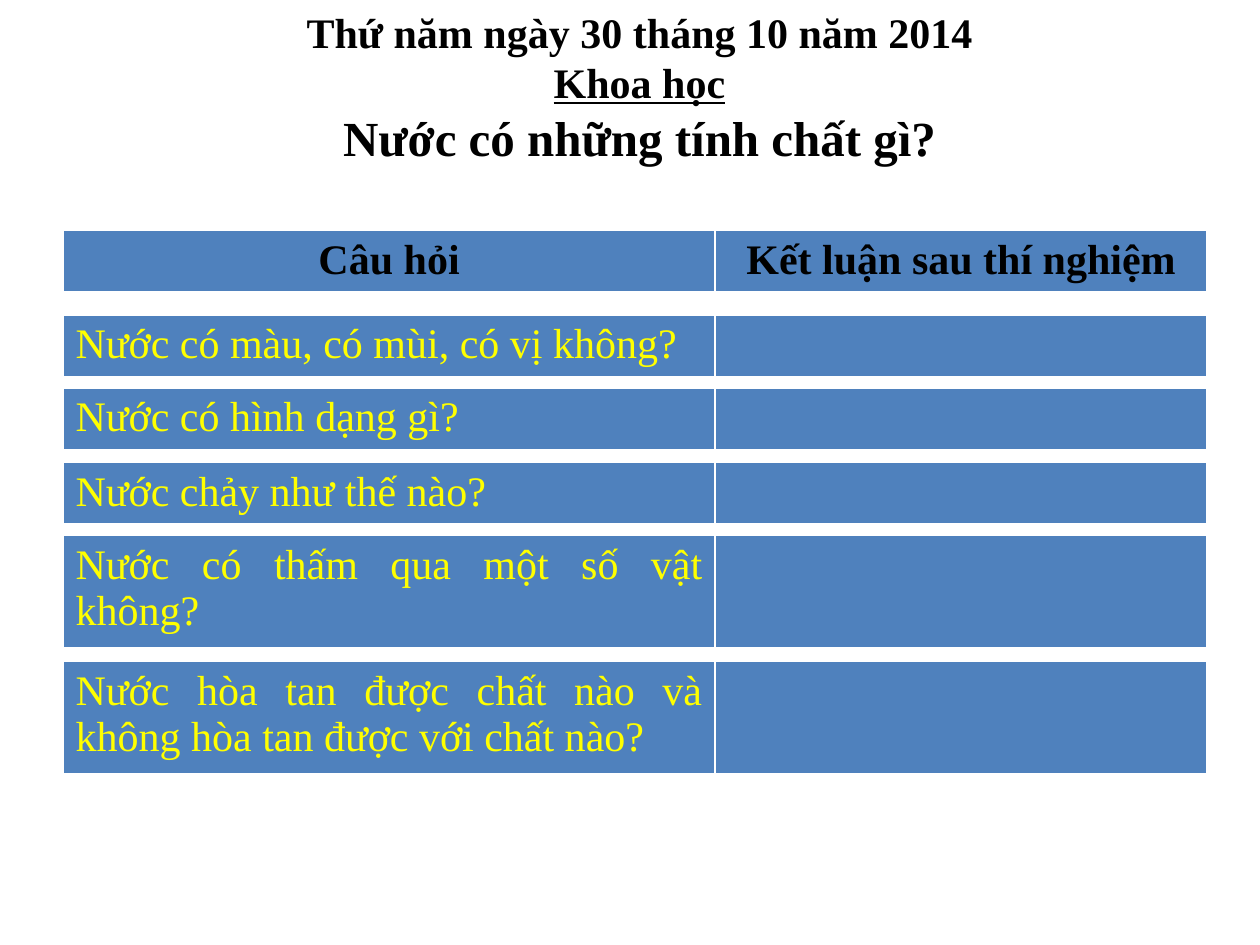
from lxml.etree import SubElement
from pptx import Presentation
from pptx.dml.color import RGBColor
from pptx.enum.text import PP_ALIGN
from pptx.oxml.ns import qn
from pptx.util import Inches, Pt

COLORS = {"ink": "000000", "question": "FFFF00", "cell": "4F81BD", "border": "FFFFFF"}
FONT = "Times New Roman"
COLUMN_SHARES = (0.57, 0.43)
BORDERS = {"a:lnL": 1, "a:lnR": 1, "a:lnT": 1, "a:lnB": 3}
LEFT, WIDTH = 0.5, 9.08
ROW_HEIGHTS = {1: 0.5, 2: 0.9}

TITLES = [
    ("Thứ năm ngày 30 tháng 10 năm 2014", {}),
    ("Khoa học", {"underline": True}),
    ("Nước có những tính chất gì?", {"size": 28}),
]
HEADINGS = ("Câu hỏi", "Kết luận sau thí nghiệm")
# top, lines of text, question
QUESTIONS = [
    (2.5, 1, "Nước có màu, có mùi, có vị không?"),
    (3.08, 1, "Nước có hình dạng gì?"),
    (3.67, 1, "Nước chảy như thế nào?"),
    (4.25, 2, "Nước có thấm qua một số vật không?"),
    (5.25, 2, "Nước hòa tan được chất nào và không hòa tan được với chất nào?"),
]


def write(para, text, size=24, color="ink", bold=False, underline=False, align=None):
    para.alignment = align
    span = para.add_run()
    span.text = text
    font = span.font
    font.name, font.size, font.bold = FONT, Pt(size), bold
    font.underline = underline
    font.color.rgb = RGBColor.from_string(COLORS[color])


def style_cell(cell):
    """Draw the white borders, then the fill, in the order the schema needs."""
    properties = cell._tc.get_or_add_tcPr()
    for tag, points in BORDERS.items():
        line = SubElement(properties, qn(tag), w=str(Pt(points)))
        fill = SubElement(line, qn("a:solidFill"))
        SubElement(fill, qn("a:srgbClr"), val=COLORS["border"])
    cell.fill.solid()
    cell.fill.fore_color.rgb = RGBColor.from_string(COLORS["cell"])


def add_titles(page, box):
    frame = page.shapes.add_textbox(*map(Inches, box)).text_frame
    frame.word_wrap = True
    for number, (text, style) in enumerate(TITLES):
        para = frame.add_paragraph() if number else frame.paragraphs[0]
        write(para, text, bold=True, align=PP_ALIGN.CENTER, **style)


def add_row_table(page, box, texts, **style):
    """Place a table of one row, leaving cells without text empty."""
    table = page.shapes.add_table(1, len(texts), *map(Inches, box)).table
    for column, cell, share, text in zip(table.columns, table.rows[0].cells, COLUMN_SHARES, texts):
        column.width = Inches(box[2] * share)
        style_cell(cell)
        if text:
            write(cell.text_frame.paragraphs[0], text, **style)
        else:
            cell.text_frame.paragraphs[0].font.size = Pt(24)


def main():
    deck = Presentation()
    deck.slide_width, deck.slide_height = Inches(10), Inches(7.5)
    page = deck.slides.add_slide(deck.slide_layouts[6])
    add_titles(page, (0.33, 0, 9.49, 1.38))
    add_row_table(page, (LEFT, 1.83, WIDTH, ROW_HEIGHTS[1]), HEADINGS,
                  bold=True, align=PP_ALIGN.CENTER)
    for top, lines, question in QUESTIONS:
        align = PP_ALIGN.JUSTIFY if lines > 1 else PP_ALIGN.LEFT
        add_row_table(page, (LEFT, top, WIDTH, ROW_HEIGHTS[lines]), (question, ""),
                      color="question", align=align)
    deck.save("out.pptx")


if __name__ == "__main__":
    main()
